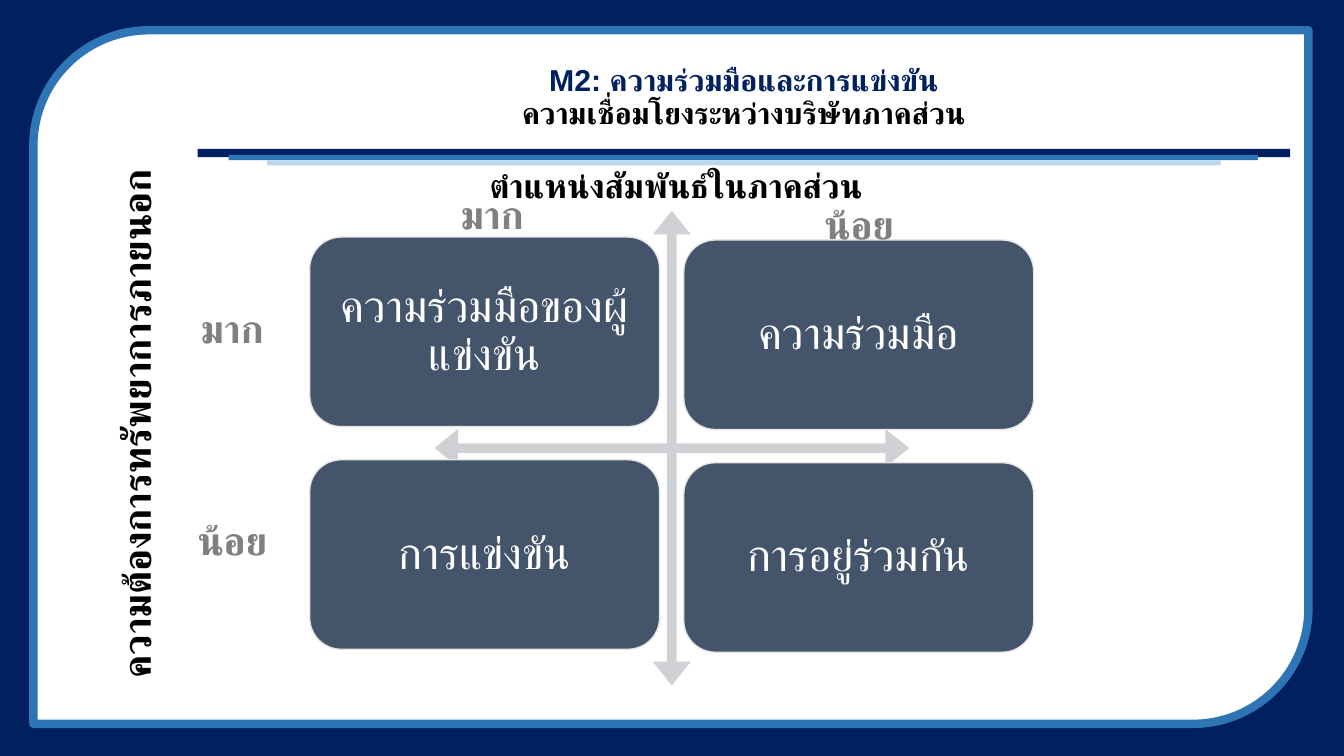
from pptx import Presentation
from pptx.dml.color import RGBColor
from pptx.enum.shapes import MSO_SHAPE as Shape
from pptx.enum.text import MSO_ANCHOR as Anchor, MSO_AUTO_SIZE as AutoSize, PP_ALIGN as Align
from pptx.util import Pt

NAVY, BLUE, PALE_BLUE = "002060", "2E75B6", "BDD7EE"
SLATE, SILVER, ARROW_GRAY = "44546A", "E7E6E6", "CFD1D4"
WHITE, BLACK, GRAY = "FFFFFF", "000000", "808080"


def color(hex_text):
    return RGBColor.from_string(hex_text)


def add_text(paragraph, text, size=28, font="Calibri", fill=BLACK, bold=True):
    run = paragraph.add_run()
    run.text = text
    run.font.size = Pt(size)
    run.font.name = font
    run.font.bold = bold
    run.font.color.rgb = color(fill)


class MatrixSlide:
    label_width = 421.2

    def __init__(self, presentation):
        self.slide = presentation.slides.add_slide(presentation.slide_layouts[6])

    def panel(self, kind, left, top, width, height, fill, line=None, line_width=1):
        shape = self.slide.shapes.add_shape(kind, Pt(left), Pt(top), Pt(width), Pt(height))
        shape.shadow.inherit = False
        shape.fill.solid()
        shape.fill.fore_color.rgb = color(fill)
        if line:
            shape.line.color.rgb = color(line)
            shape.line.width = Pt(line_width)
        else:
            shape.line.fill.background()
        return shape

    def quadrant(self, text, left, top):
        shape = self.panel(Shape.ROUNDED_RECTANGLE, left, top, 250, 135.4, SLATE, SILVER)
        frame = shape.text_frame
        frame.word_wrap = True
        frame.vertical_anchor = Anchor.MIDDLE
        frame.margin_left = frame.margin_right = Pt(9.6)
        frame.margin_top = frame.margin_bottom = Pt(9.6)
        paragraph = frame.paragraphs[0]
        paragraph.alignment = Align.CENTER
        paragraph.line_spacing = 0.9
        add_text(paragraph, text, size=32, fill=WHITE, bold=False)

    def text_box(self, left, top, width, height):
        shape = self.slide.shapes.add_textbox(Pt(left), Pt(top), Pt(width), Pt(height))
        shape.text_frame.word_wrap = True
        shape.text_frame.paragraphs[0].alignment = Align.CENTER
        return shape

    def title(self, heading, subheading):
        frame = self.text_box(141.1, 35.3, 780.5, 69.8).text_frame
        frame.vertical_anchor = Anchor.MIDDLE
        paragraph = frame.paragraphs[0]
        paragraph.line_spacing = 0.9
        add_text(paragraph, heading, size=21.6, font="Arial", fill=NAVY)
        paragraph.add_line_break()
        add_text(paragraph, subheading, size=21.6)

    def label(self, text, left, top, height=41, rotation=0, **text_format):
        shape = self.text_box(left, top, self.label_width, height)
        shape.rotation = rotation
        shape.text_frame.auto_size = AutoSize.SHAPE_TO_FIT_TEXT
        add_text(shape.text_frame.paragraphs[0], text, **text_format)


def main():
    presentation = Presentation()
    presentation.slide_width = Pt(960)
    presentation.slide_height = Pt(540)
    matrix = MatrixSlide(presentation)

    matrix.panel(Shape.RECTANGLE, 0, 0, 960, 540, NAVY)
    frame = matrix.panel(Shape.ROUND_2_DIAG_RECTANGLE, 23.8, 21.6, 910.8, 495.4, WHITE, BLUE, 6)
    frame.rotation = 180
    for left, top, width, height, fill in (
        (141.1, 106.4, 780.5, 5.8, NAVY),
        (163.4, 110.9, 735.1, 3.6, BLUE),
        (190.8, 114.5, 681.1, 3.6, PALE_BLUE),
    ):
        matrix.panel(Shape.RECTANGLE, left, top, width, height, fill)

    arrows = matrix.panel(Shape.QUAD_ARROW, 310.3, 150.5, 339.1, 339.1, ARROW_GRAY)
    for index, value in enumerate((0.02, 0.04, 0.05)):
        arrows.adjustments[index] = value

    columns = (
        (221.2, 169.3, ("ความร่วมมือของผู้แข่งขัน", "การแข่งขัน")),
        (488.4, 171.4, ("ความร่วมมือ", "การอยู่ร่วมกัน")),
    )
    for left, top, names in columns:
        for row, name in enumerate(names):
            matrix.quadrant(name, left, top + row * 159.1)

    matrix.title("M2: ความร่วมมือและการแข่งขัน", "ความเชื่อมโยงระหว่างบริษัทภาคส่วน")
    matrix.label("ตำแหน่งสัมพันธ์ในภาคส่วน", 272.2, 114.5, height=36, size=24)
    matrix.label("ความต้องการทรัพยาการภายนอก", -113.8, 282.2, rotation=270)
    for text, left, top in (
        ("มาก", 141.1, 132.5),
        ("มาก", -44.6, 213.8),
        ("น้อย", -44.6, 365),
        ("น้อย", 403.2, 139.7),
    ):
        matrix.label(text, left, top, fill=GRAY)

    presentation.save("out.pptx")


if __name__ == "__main__":
    main()
